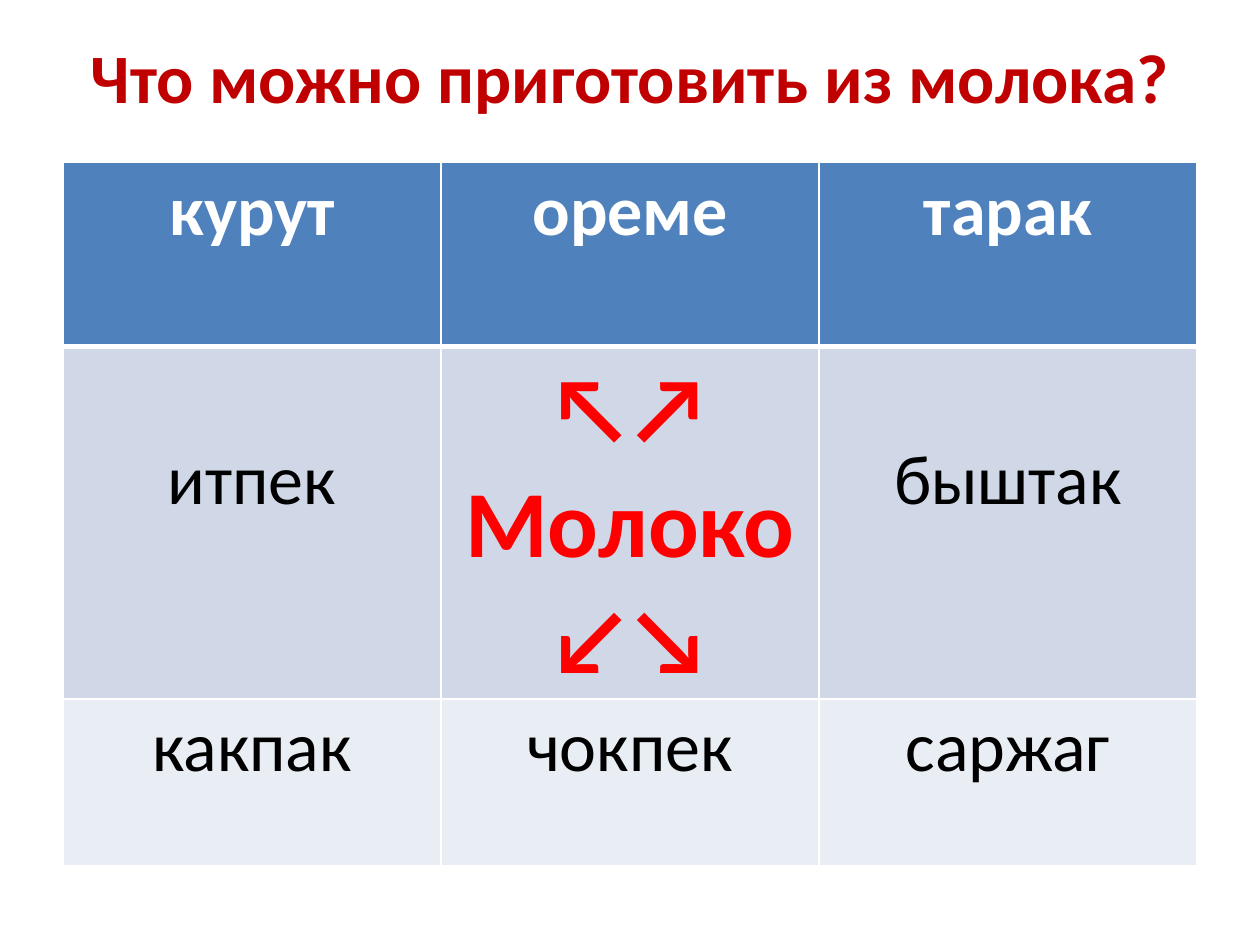
from lxml.etree import SubElement
from pptx import Presentation
from pptx.dml.color import RGBColor
from pptx.enum.text import MSO_ANCHOR as Anchor, PP_ALIGN as Align
from pptx.oxml.ns import qn
from pptx.util import Cm, Pt

TITLE = "Что можно приготовить из молока?"
DISHES = [
    ["курут", "ореме", "тарак"],
    ["итпек", "↖↗\nМолоко\n↙↘", "быштак"],
    ["какпак", "чокпек", "саржаг"],
]
ROW_HEIGHTS = [3.7, 6.6, 3.35]
ROW_FILLS = ["4F81BD", "D0D8E8", "E9EDF4"]
RULE_WIDTHS = [1, 3, 1, 1]  # points, from the top edge of the table down

TITLE_FONT = {"size": Pt(39.6), "bold": True, "color": "C00000"}
HEADER_FONT = {"size": Pt(40), "bold": True, "color": "FFFFFF"}
DISH_FONT = {"size": Pt(40), "bold": False, "color": "000000"}
MILK_FONT = {"size": Pt(54), "bold": True, "color": "FF0000"}

LEFT, WIDTH = 1.27, 22.86
MIDDLE = 1
SIDE_DISH_DROP = 1.85


def rgb(value):
    return RGBColor.from_string(value)


def write(frame, text, style):
    """Fill the frame with one centred, styled paragraph per line of text."""
    frame.text = text
    for paragraph in frame.paragraphs:
        paragraph.alignment = Align.CENTER
        font = paragraph.runs[0].font
        font.name = "Calibri"
        for key, value in style.items():
            if key == "color":
                font.color.rgb = rgb(value)
            else:
                setattr(font, key, value)


def draw_borders(cell, top, bottom):
    properties = cell._tc.get_or_add_tcPr()
    for edge, width in {"lnL": 1, "lnR": 1, "lnT": top, "lnB": bottom}.items():
        line = SubElement(properties, qn(f"a:{edge}"), w=str(Pt(width)))
        fill = SubElement(line, qn("a:solidFill"))
        SubElement(fill, qn("a:srgbClr"), val="FFFFFF")


def dish_style(row, column):
    if row == 0:
        return HEADER_FONT
    return MILK_FONT if row == column == MIDDLE else DISH_FONT


def add_title(slide):
    frame = slide.shapes.add_textbox(
        Cm(LEFT), Cm(0.76), Cm(WIDTH), Cm(1.55)).text_frame
    frame.word_wrap = True
    frame.vertical_anchor = Anchor.MIDDLE
    write(frame, TITLE, TITLE_FONT)


def add_dishes(slide):
    table = slide.shapes.add_table(
        len(DISHES), len(DISHES[0]), Cm(LEFT), Cm(3.28),
        Cm(WIDTH), Cm(sum(ROW_HEIGHTS))).table
    for r, dishes in enumerate(DISHES):
        table.rows[r].height = Cm(ROW_HEIGHTS[r])
        for c, dish in enumerate(dishes):
            cell = table.cell(r, c)
            write(cell.text_frame, dish, dish_style(r, c))
            if r == MIDDLE and c != MIDDLE:
                cell.margin_top = Cm(SIDE_DISH_DROP)
            draw_borders(cell, RULE_WIDTHS[r], RULE_WIDTHS[r + 1])
            cell.fill.solid()
            cell.fill.fore_color.rgb = rgb(ROW_FILLS[r])


def main():
    deck = Presentation()
    deck.slide_width, deck.slide_height = Cm(25.4), Cm(19.05)
    slide = deck.slides.add_slide(deck.slide_layouts[6])
    add_title(slide)
    add_dishes(slide)
    deck.save("out.pptx")


if __name__ == "__main__":
    main()
